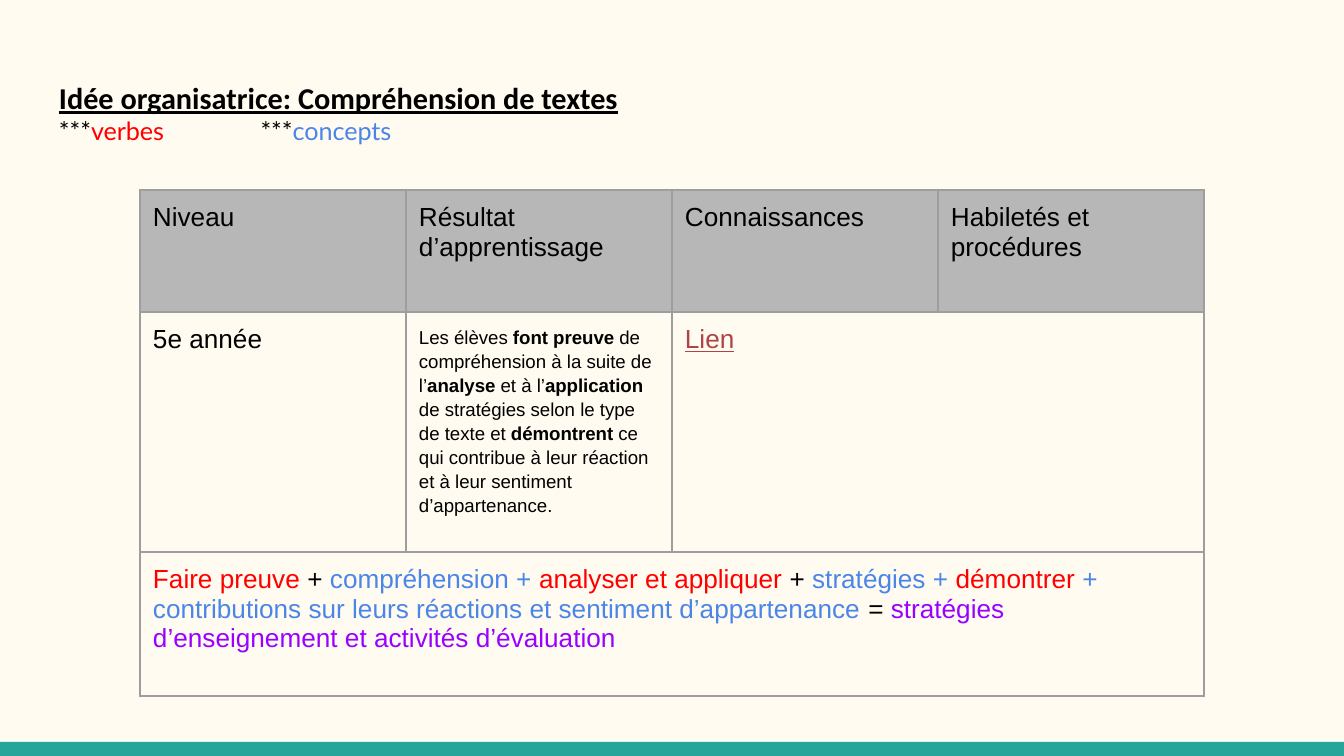
from itertools import product

from lxml.etree import SubElement
from pptx import Presentation
from pptx.dml.color import RGBColor
from pptx.enum.shapes import MSO_SHAPE
from pptx.oxml.ns import qn
from pptx.util import Emu, Pt

CREAM = RGBColor(0xFF, 0xFB, 0xF0)
TEAL = RGBColor(0x26, 0xA6, 0x9A)
BLACK = RGBColor(0x00, 0x00, 0x00)
RED = RGBColor(0xFF, 0x00, 0x00)
BLUE = RGBColor(0x4A, 0x86, 0xE8)
PURPLE = RGBColor(0x99, 0x00, 0xFF)
LINK = RGBColor(0xAF, 0x43, 0x45)
HEADER = RGBColor(0xB7, 0xB7, 0xB7)
BORDER = RGBColor(0x9E, 0x9E, 0x9E)

WIDTH, HEIGHT = 1344, 756
INSET = 13


def px(length):
    return Emu(round(length * 914400 / 134.4))


def span(text, color=BLACK, size=14, font="Arial", bold=False, underline=False):
    return dict(text=text, color=color, size=size, font=font, bold=bold, underline=underline)


class Page:
    def __init__(self, deck, background):
        self.slide = deck.slides.add_slide(deck.slide_layouts[6])
        self.slide.background.fill.solid()
        self.slide.background.fill.fore_color.rgb = background

    def bar(self, left, top, width, height, color):
        shape = self.slide.shapes.add_shape(
            MSO_SHAPE.RECTANGLE, px(left), px(top), px(width), px(height))
        shape.shadow.inherit = False
        shape.fill.solid()
        shape.fill.fore_color.rgb = color
        shape.line.fill.background()

    def fill_text(self, frame, paragraphs, spacing=1.0):
        frame.word_wrap = True
        for index, spans in enumerate(paragraphs):
            para = frame.add_paragraph() if index else frame.paragraphs[0]
            para.line_spacing = spacing
            for item in spans:
                run = para.add_run()
                run.text = item["text"]
                run.font.name = item["font"]
                run.font.size = Pt(item["size"])
                run.font.bold = item["bold"]
                run.font.underline = item["underline"]
                run.font.color.rgb = item["color"]

    def inset(self, holder):
        holder.margin_left = holder.margin_right = px(INSET)
        holder.margin_top = holder.margin_bottom = px(INSET)

    def text(self, left, top, width, height, paragraphs):
        box = self.slide.shapes.add_textbox(px(left), px(top), px(width), px(height))
        self.inset(box.text_frame)
        self.fill_text(box.text_frame, paragraphs)

    def border(self, cell):
        properties = cell._tc.get_or_add_tcPr()
        for index, side in enumerate(("lnL", "lnR", "lnT", "lnB")):
            line = properties.makeelement(qn(f"a:{side}"), {"w": str(Pt(0.75))})
            fill = SubElement(line, qn("a:solidFill"))
            SubElement(fill, qn("a:srgbClr"), val=str(BORDER))
            properties.insert(index, line)

    def table(self, left, top, columns, rows):
        frame = self.slide.shapes.add_table(
            len(rows), len(columns), px(left), px(top), px(sum(columns)), px(sum(rows)))
        table = frame.table
        table.first_row = table.horz_banding = False
        for column, width in zip(table.columns, columns):
            column.width = px(width)
        for row, height in zip(table.rows, rows):
            row.height = px(height)
        for row, column in product(range(len(rows)), range(len(columns))):
            cell = table.cell(row, column)
            self.inset(cell)
            if row == 0:
                cell.fill.solid()
                cell.fill.fore_color.rgb = HEADER
            else:
                cell.fill.background()
            self.border(cell)
        return table

    def cell(self, table, row, column, spans, across=1, spacing=1.0):
        cell = table.cell(row, column)
        if across > 1:
            cell.merge(table.cell(row, column + across - 1))
        self.fill_text(cell.text_frame, [spans], spacing)


def main():
    deck = Presentation()
    deck.slide_width, deck.slide_height = px(WIDTH), px(HEIGHT)
    page = Page(deck, CREAM)
    page.bar(0, 742, WIDTH, 14, TEAL)

    legend = dict(size=13.5, font="Lato")
    page.text(46, 66, 1252, 90, [
        [span("Idée organisatrice: Compréhension de textes",
              size=16.2, font="Calibri", bold=True, underline=True)],
        [span("***", **legend), span("verbes", RED, **legend),
         span("\t\t***", **legend), span("concepts", BLUE, **legend)],
    ])

    table = page.table(140, 190, [266] * 4, [122, 240, 144])
    headings = ["Niveau", "Résultat d’apprentissage", "Connaissances", "Habiletés et procédures"]
    for column, heading in enumerate(headings):
        page.cell(table, 0, column, [span(heading)])

    page.cell(table, 1, 0, [span("5e année")])
    outcome = [
        "Les élèves ", "font preuve", " de compréhension à la suite de l’", "analyse",
        " et à l’", "application", " de stratégies selon le type de texte et ", "démontrent",
        " ce qui contribue à leur réaction et à leur sentiment d’appartenance.",
    ]
    page.cell(table, 1, 1, [span(text, size=10, bold=index % 2 == 1)
                            for index, text in enumerate(outcome)], spacing=1.15)
    page.cell(table, 1, 2, [span("Lien", LINK, underline=True)], across=2)
    page.cell(table, 2, 0, [
        span("Faire preuve ", RED),
        span("+ "),
        span("compréhension + ", BLUE),
        span("analyser et appliquer", RED),
        span(" + "),
        span("stratégies + ", BLUE),
        span("démontrer ", RED),
        span("+ contributions sur leurs réactions et sentiment d’appartenance ", BLUE),
        span("= "),
        span("stratégies d’enseignement et activités d’évaluation", PURPLE),
    ], across=4)

    deck.save("out.pptx")


if __name__ == "__main__":
    main()
